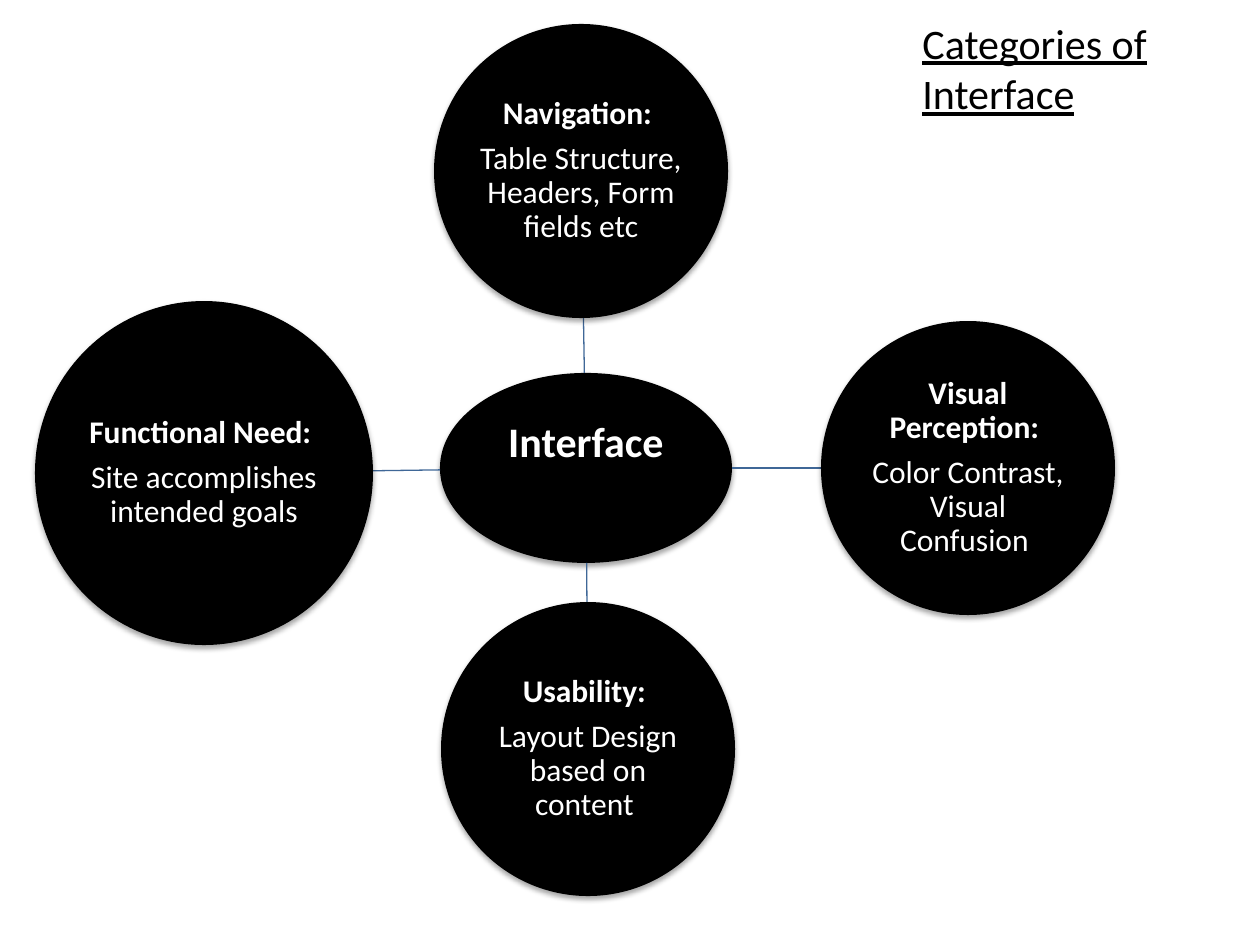
import math
from dataclasses import dataclass

import pptx
import pptx.dml.color
import pptx.enum.shapes
import pptx.enum.text
import pptx.oxml
import pptx.oxml.ns
import pptx.util

EMU_PER_PX = 914400 / 126
SLIDE_WIDTH, SLIDE_HEIGHT = 1260, 945


@dataclass(frozen=True)
class Theme:
    font: str = "Calibri"
    bubble: str = "000000"
    bubble_text: str = "FFFFFF"
    title_text: str = "000000"
    spoke: str = "3F6797"
    large: int = 24
    body: int = 18
    spoke_width: float = 0.75
    line_spacing: float = 0.9
    space_after: float = 0.35  # share of the type size


@dataclass(frozen=True)
class Bubble:
    left: int
    top: int
    width: int
    height: int
    heading: str
    detail: str = ""
    size: int = 18
    inset: int = 1
    extra_bottom: int = 0

    @property
    def center(self) -> tuple[float, float]:
        return self.left + self.width / 2, self.top + self.height / 2


THEME = Theme()

HUB = Bubble(440, 373, 292, 190, "Interface", size=THEME.large, inset=3, extra_bottom=49)
CATEGORIES = [
    Bubble(434, 24, 294, 294, "Navigation: ", "Table Structure, Headers, Form fields etc"),
    Bubble(821, 321, 294, 294, "Visual Perception: ", "Color Contrast, Visual Confusion "),
    Bubble(441, 602, 294, 294, "Usability: ", "Layout Design based on content "),
    Bubble(35, 301, 338, 344, "Functional Need: ", "Site accomplishes intended goals"),
]


def px(length: float) -> pptx.util.Emu:
    return pptx.util.Emu(round(length * EMU_PER_PX))


def rgb(value: str) -> pptx.dml.color.RGBColor:
    return pptx.dml.color.RGBColor.from_string(value)


def style_font(font, size: int, color: str, bold: bool = False) -> None:
    font.name = THEME.font
    font.size = pptx.util.Pt(size)
    font.bold = bold
    font.color.rgb = rgb(color)


def add_soft_shadow(shape) -> None:
    shape.shadow.inherit = False
    effects = shape._element.spPr.find(pptx.oxml.ns.qn("a:effectLst"))
    effects.append(pptx.oxml.parse_xml(
        f'<a:outerShdw {pptx.oxml.ns.nsdecls("a")} blurRad="39370" dist="22860" '
        'dir="5400000" rotWithShape="0"><a:srgbClr val="000000">'
        '<a:alpha val="35000"/></a:srgbClr></a:outerShdw>'
    ))


def add_bubble(slide, bubble: Bubble) -> None:
    oval = slide.shapes.add_shape(
        pptx.enum.shapes.MSO_SHAPE.OVAL,
        px(bubble.left), px(bubble.top), px(bubble.width), px(bubble.height),
    )
    oval.fill.solid()
    oval.fill.fore_color.rgb = rgb(THEME.bubble)
    oval.line.fill.background()
    add_soft_shadow(oval)

    frame = oval.text_frame
    frame.word_wrap = True
    frame.vertical_anchor = pptx.enum.text.MSO_ANCHOR.MIDDLE
    frame.margin_left = frame.margin_right = frame.margin_top = px(bubble.inset)
    frame.margin_bottom = px(bubble.inset + bubble.extra_bottom)
    frame.text = "\n".join(filter(None, (bubble.heading, bubble.detail)))
    for index, paragraph in enumerate(frame.paragraphs):
        paragraph.alignment = pptx.enum.text.PP_ALIGN.CENTER
        paragraph.line_spacing = THEME.line_spacing
        paragraph.space_after = pptx.util.Pt(bubble.size * THEME.space_after)
        style_font(paragraph.font, bubble.size, THEME.bubble_text, bold=index == 0)


def edge_toward(bubble: Bubble, target: Bubble) -> tuple[float, float]:
    """Point where the line between two centers leaves the bubble."""
    x, y = bubble.center
    dx, dy = target.center[0] - x, target.center[1] - y
    reach = 1 / math.hypot(dx / (bubble.width / 2), dy / (bubble.height / 2))
    return x + dx * reach, y + dy * reach


def add_spoke(slide, hub: Bubble, category: Bubble) -> None:
    ends = edge_toward(hub, category) + edge_toward(category, hub)
    spoke = slide.shapes.add_connector(
        pptx.enum.shapes.MSO_CONNECTOR.STRAIGHT, *map(px, ends)
    )
    spoke.line.color.rgb = rgb(THEME.spoke)
    spoke.line.width = pptx.util.Pt(THEME.spoke_width)
    spoke._element.spPr.append(pptx.oxml.parse_xml(
        f'<a:effectLst {pptx.oxml.ns.nsdecls("a")}/>'
    ))


def add_title(slide) -> None:
    title = slide.shapes.add_textbox(px(910), px(11), px(324), px(115))
    title.text_frame.word_wrap = True
    title.text_frame.text = "Categories of Interface"
    font = title.text_frame.paragraphs[0].font
    style_font(font, THEME.large, THEME.title_text)
    font.underline = True


def main() -> None:
    presentation = pptx.Presentation()
    presentation.slide_width = px(SLIDE_WIDTH)
    presentation.slide_height = px(SLIDE_HEIGHT)
    slide = presentation.slides.add_slide(presentation.slide_layouts[6])

    # Hub with its four categories
    add_bubble(slide, HUB)
    for category in CATEGORIES:
        add_spoke(slide, HUB, category)
        add_bubble(slide, category)

    # Title in the top right corner
    add_title(slide)
    presentation.save("out.pptx")


if __name__ == "__main__":
    main()
